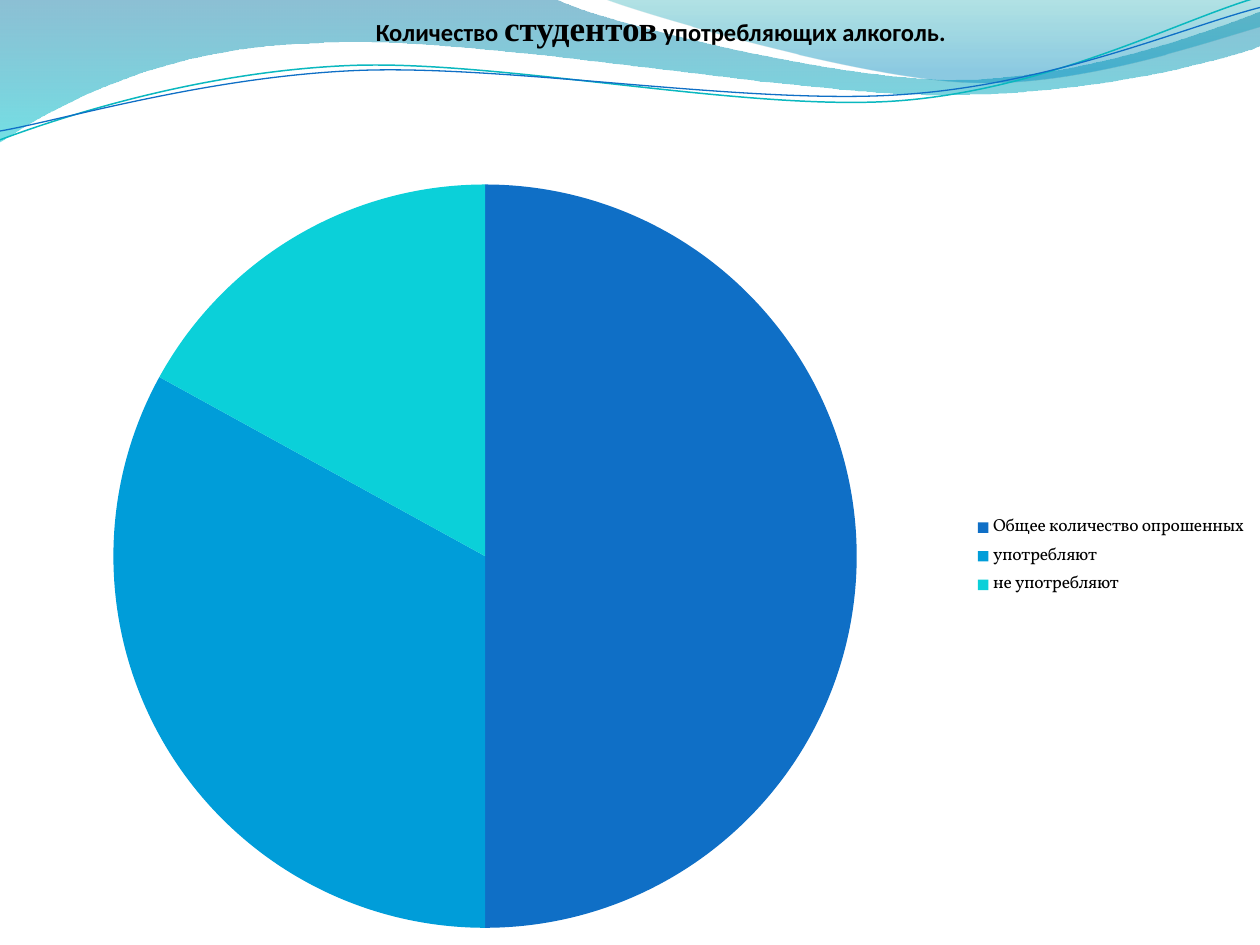
from math import cos, radians, sin

from pptx import Presentation
from pptx.chart.data import CategoryChartData as PieData
from pptx.dml.color import RGBColor
from pptx.enum.chart import XL_CHART_TYPE as Kind, XL_LEGEND_POSITION as Side
from pptx.enum.text import MSO_ANCHOR as Anchor, MSO_AUTO_SIZE as Auto, PP_ALIGN as Align
from pptx.oxml import parse_xml
from pptx.oxml.ns import nsdecls
from pptx.util import Inches, Pt

BLACK = RGBColor(0x00, 0x00, 0x00)
BLUE = RGBColor(0x0F, 0x6F, 0xC6)
SKY = RGBColor(0x00, 0x9D, 0xD9)
CYAN = RGBColor(0x0B, 0xD0, 0xD9)
TEAL = RGBColor(0x0A, 0xB8, 0xBF)
DEEP = RGBColor(0x00, 0x74, 0xA1)
AQUA = RGBColor(0x00, 0xC6, 0xCF)
SEA = RGBColor(0x00, 0xA1, 0xA9)
LAKE = RGBColor(0x00, 0x8B, 0xBF)
TILT = 2.7

deck = Presentation()
deck.slide_width, deck.slide_height = Inches(10), Inches(7.5)
W, H = deck.slide_width, deck.slide_height
slide = deck.slides.add_slide(deck.slide_layouts[5])


def add_run(para, text, size=14, face="Calibri", bold=True, color=BLACK):
    run = para.add_run()
    run.text = text
    font = run.font
    font.size, font.name, font.bold = Pt(size), face, bold
    font.color.rgb = color


def draw(shapes, start, parts, close):
    """Outline in inches: a part of one point is a line, of three a Bezier curve."""
    dots = [start] + [dot for part in parts for dot in part]
    dots = [(Inches(x), Inches(y)) for x, y in dots]
    pen = shapes.build_freeform(*dots[0])
    pen.add_line_segments(dots[1:], close=close)
    shape = pen.convert_to_shape()
    shape.shadow.inherit = False
    # Join the three points of each curve into one Bezier segment
    lines = iter(shape.element.xpath(".//a:lnTo"))
    for part in parts:
        group = [next(lines) for _ in part]
        if len(group) == 3:
            bend = parse_xml(f'<a:cubicBezTo {nsdecls("a")}/>')
            group[0].addprevious(bend)
            for line in group:
                bend.append(line[0])
                line.getparent().remove(line)
    return shape


# Shaded waves: start, outline, gradient stops (place, colour, opacity in %)
waves = [
    ((0, 0),
     [[(4.4, -0.01)], [(4.76, 0.17), (6.64, 0.63), (7.58, 0.63)],
      [(8.53, 0.63), (9.58, 0.26), (10, 0.09)], [(10.01, 0.36)],
      [(9.83, 0.44), (8.7, 0.76), (7.46, 0.75)],
      [(6.22, 0.75), (3.82, 0.28), (2.57, 0.34)],
      [(1.29, 0.36), (0.46, 0.83), (-0.01, 1.13)]],
     [(0, DEEP, 45), (1, AQUA, 55)]),
    ((4.79, -0.01),
     [[(5.09, 0.11), (6.82, 0.62), (7.69, 0.65)],
      [(8.56, 0.69), (9.61, 0.32), (10, 0.21)], [(10, 0)]],
     [(0, SEA, 30), (0.8, LAKE, 45)]),
]
for start, parts, stops in waves:
    wave = draw(slide.shapes, start, parts, True)
    wave.line.fill.background()
    wave.fill.gradient()
    wave.fill.gradient_angle = 270
    for stop, (place, color, _) in zip(wave.fill.gradient_stops, stops):
        stop.position, stop.color.rgb = place, color
    for node, (_, _, share) in zip(wave.element.xpath(".//a:gs/a:srgbClr"), stops):
        node.append(parse_xml(f'<a:alpha {nsdecls("a")} val="{share * 1000}"/>'))

# Thin curves, laid level around their centre and then tilted
curves = [
    ([(0, 1.11), (0.48, 0.93), (1.58, 0.57), (2.77, 0.52), (3.95, 0.47),
      (5.93, 0.89), (7.13, 0.8), (8.33, 0.71), (9.38, 0.15), (9.98, -0.02)],
     (4.99, 0.58), TEAL, 0.85),
    ([(0, 1.04), (0.47, 0.96), (1.64, 0.61), (2.83, 0.56), (4.03, 0.51),
      (5.97, 0.84), (7.17, 0.75), (8.36, 0.67), (9.41, 0.21), (10, 0.06)],
     (5, 0.59), BLUE, 0.75),
]
pair = slide.shapes.add_group_shape()
c, s = cos(radians(TILT)), sin(radians(TILT))
for dots, (mx, my), color, width in curves:
    level = [(mx + (x - mx) * c - (y - my) * s, my + (x - mx) * s + (y - my) * c)
             for x, y in dots]
    parts = [level[at:at + 3] for at in range(1, len(level), 3)]
    curve = draw(pair.shapes, level[0], parts, False)
    curve.rotation = -TILT
    curve.fill.background()
    curve.line.color.rgb, curve.line.width = color, Pt(width)

# Pie chart
data = PieData()
data.categories = ["Общее количество опрошенных", "употребляют", "не употребляют"]
data.add_series("Series 1", (50, 33, 17))
top = Inches(1.33)
chart = slide.shapes.add_chart(Kind.PIE, 0, top, W, H - top, data).chart
chart.has_title = False
chart.font.size, chart.font.name = Pt(10), "Vollkorn"
chart.font.color.rgb = BLACK
chart.has_legend = True
chart.legend.position = Side.RIGHT
chart.legend.include_in_layout = True
plot = chart.plots[0]
plot.vary_by_categories = True
for spot, color in enumerate((BLUE, SKY, CYAN)):
    fill = plot.series[0].points[spot].format.fill
    fill.solid()
    fill.fore_color.rgb = color

# Place of the pie, as shares of the chart
area = chart.element.xpath(".//c:plotArea")[0]
for old in area.xpath("./c:layout"):
    area.remove(old)
box = {"x": 0.09, "y": 0.02, "w": 0.59, "h": 0.96}
sizes = "".join(f'<c:{key} val="{val}"/>' for key, val in box.items())
area.insert(0, parse_xml(
    f'<c:layout {nsdecls("c")}><c:manualLayout><c:layoutTarget val="inner"/>'
    f'<c:xMode val="edge"/><c:yMode val="edge"/>{sizes}</c:manualLayout></c:layout>'))

# Title, in front of the waves
title = slide.shapes.title
slide.shapes.element.append(title.element)
title.left, title.top, title.width, title.height = 0, 0, W, Inches(0.44)
frame = title.text_frame
frame.word_wrap, frame.auto_size = True, Auto.SHAPE_TO_FIT_TEXT
frame.vertical_anchor = Anchor.MIDDLE
para = frame.paragraphs[0]
para.alignment = Align.CENTER
para._p.get_or_add_pPr().set("indent", str(Inches(0.49)))
add_run(para, "Количество ")
add_run(para, "студентов", size=20, face="Times New Roman")
add_run(para, " употребляющих алкоголь.")

deck.save("out.pptx")
